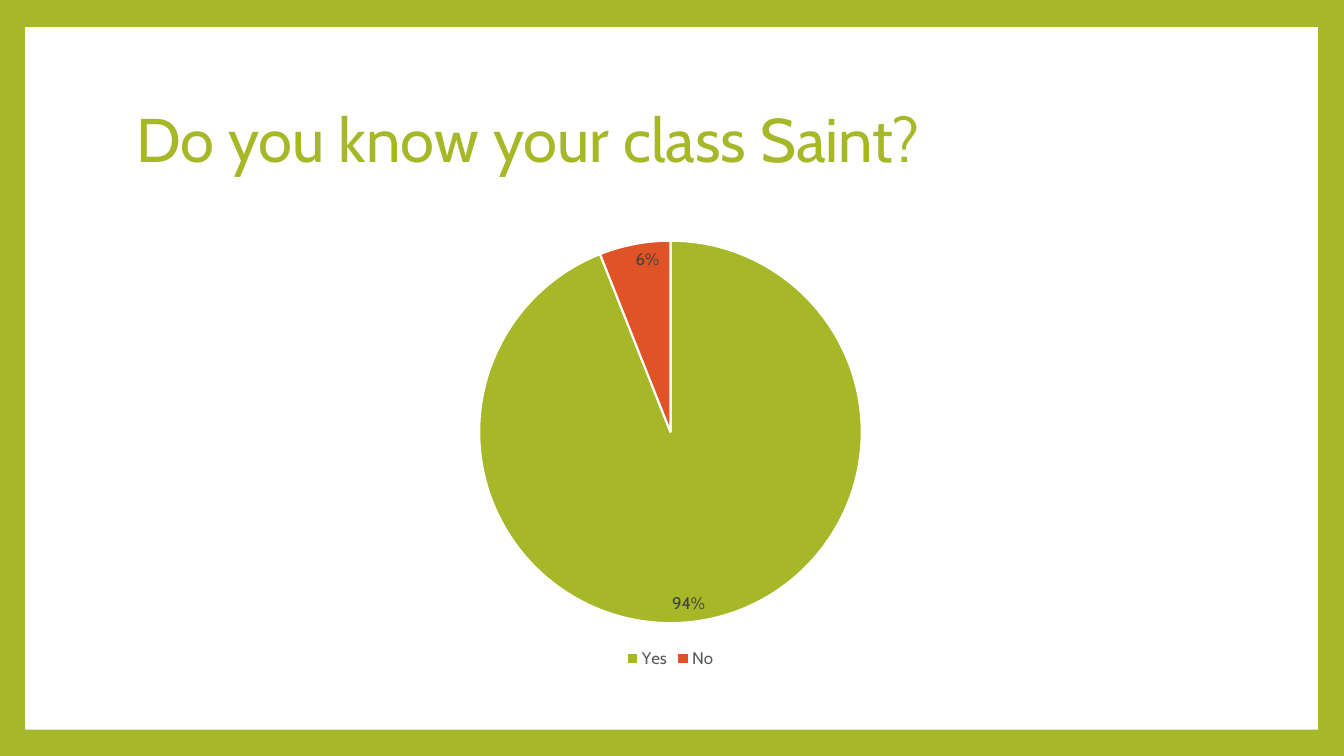
from pptx import Presentation
from pptx.chart.data import CategoryChartData as Data
from pptx.dml.color import RGBColor as RGB
from pptx.enum.chart import XL_CHART_TYPE as Kind
from pptx.enum.chart import XL_LABEL_POSITION as Spot
from pptx.enum.chart import XL_LEGEND_POSITION as Side
from pptx.enum.shapes import MSO_SHAPE as Shape
from pptx.enum.text import MSO_ANCHOR as Anchor
from pptx.enum.text import PP_ALIGN as Align
from pptx.util import Inches, Pt

FONT = "Cabin"
HUES = {
    "green": "A6B727",
    "red": "DF5327",
    "white": "FFFFFF",
    "label": "404040",
    "key": "595959",
    "black": "000000",
}


def hue(name):
    return RGB.from_string(HUES[name])


def paint(fill, name):
    fill.solid()
    fill.fore_color.rgb = hue(name)


def style(font, size, color):
    font.name = FONT
    font.size = Pt(size)
    font.bold = False
    font.color.rgb = hue(color)


def write(frame, text, size=12, color="black", align=Align.LEFT,
          anchor=Anchor.MIDDLE, space=0.9):
    frame.word_wrap = True
    frame.vertical_anchor = anchor
    para = frame.paragraphs[0]
    para.alignment = align
    para.line_spacing = space
    run = para.add_run()
    run.text = text
    style(run.font, size, color)


def add_panel(slide, box):
    panel = slide.shapes.add_shape(Shape.RECTANGLE, *map(Inches, box))
    panel.shadow.inherit = False
    paint(panel.fill, "white")
    panel.line.fill.background()
    slide.shapes.title.element.addprevious(panel.element)


def add_title(slide, box, text):
    title = slide.shapes.title
    title.left, title.top, title.width, title.height = map(Inches, box)
    write(title.text_frame, text, size=44, color="green")


def add_pie(slide, box, votes, colors):
    data = Data()
    data.categories = list(votes)
    data.add_series("Series 1", list(votes.values()))
    chart = slide.shapes.add_chart(Kind.PIE, *map(Inches, box), data).chart
    style(chart.font, 10, "black")
    chart.has_title = False
    chart.has_legend = True
    chart.legend.position = Side.BOTTOM
    chart.legend.include_in_layout = False
    style(chart.legend.font, 12, "key")

    plot = chart.plots[0]
    plot.vary_by_categories = True
    plot.has_data_labels = True
    labels = plot.data_labels
    labels.show_percentage = True
    labels.show_value = False
    labels.number_format = "0%"
    labels.number_format_is_linked = False
    labels.position = Spot.INSIDE_END
    style(labels.font, 12, "label")

    for i, color in enumerate(colors):
        look = plot.series[0].points[i].format
        paint(look.fill, color)
        look.line.color.rgb = hue("white")
        look.line.width = Pt(1.5)


def main():
    deck = Presentation()
    deck.slide_width, deck.slide_height = Inches(13.33), Inches(7.5)
    slide = deck.slides.add_slide(deck.slide_layouts[5])
    paint(slide.background.fill, "green")
    left, width = 1.25, 10.8
    add_panel(slide, (0.25, 0.27, 12.82, 6.97))
    add_title(slide, (left, 0.67, width, 1.48), "Do you know your class Saint?")
    add_pie(slide, (left, 2.25, width, 4.42), {"Yes": 94, "No": 6},
            ("green", "red"))
    deck.save("out.pptx")


if __name__ == "__main__":
    main()
